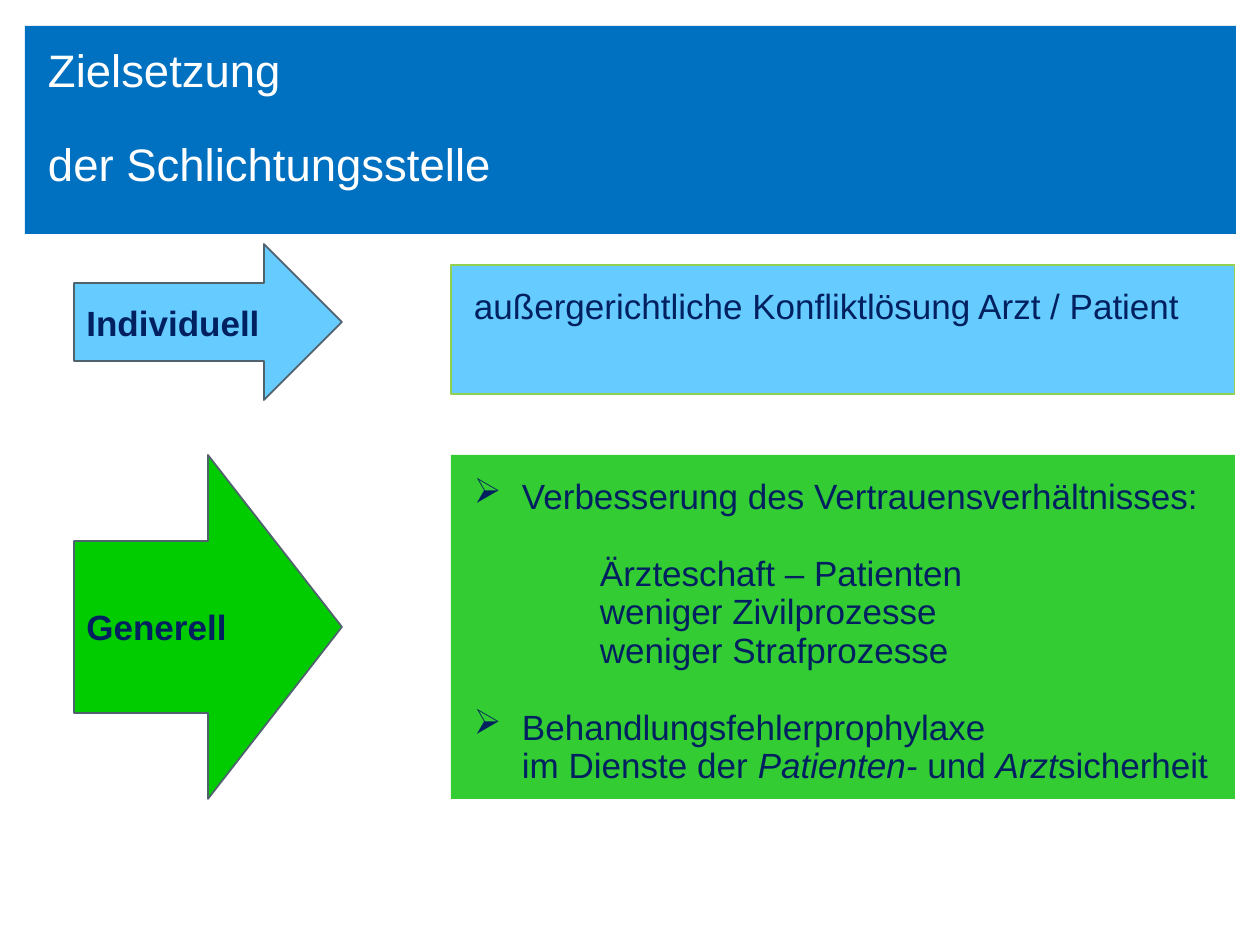
import pptx
import pptx.util
import pptx.dml.color
import pptx.enum.shapes
import pptx.enum.text
import lxml.etree

PX = 914400 // 126
FONT = "Arial"
NAVY, WHITE, SKY = "002060", "FFFFFF", "66CCFF"
INSET = 23
HANGING = 48
DEEP = 126
SHAPES = pptx.enum.shapes.MSO_SHAPE
ANCHORS = pptx.enum.text.MSO_ANCHOR


def px(length):
    return pptx.util.Emu(length * PX)


def rgb(value):
    return pptx.dml.color.RGBColor.from_string(value)


def add_block(slide, preset, box, fill, border=None, border_width=1):
    block = slide.shapes.add_shape(preset, *map(px, box))
    block.shadow.inherit = False
    block.fill.solid()
    block.fill.fore_color.rgb = rgb(fill)
    if border:
        block.line.color.rgb = rgb(border)
        block.line.width = pptx.util.Pt(border_width)
    else:
        block.line.fill.background()
    block.text_frame.word_wrap = True
    return block


def set_indent(paragraph, left, bullet=None):
    properties = paragraph._p.get_or_add_pPr()
    properties.set("marL", str(px(left)))
    properties.set("indent", str(-px(left) if bullet else 0))
    if bullet:
        mark = lxml.etree.SubElement(properties, pptx.oxml.ns.qn("a:buChar"))
        mark.set("char", bullet)


def add_runs(paragraph, runs, size, color, bold=False):
    paragraph.alignment = pptx.enum.text.PP_ALIGN.LEFT
    for text, italic in runs:
        run = paragraph.add_run()
        run.text = text
        run.font.name = FONT
        run.font.size = pptx.util.Pt(size)
        run.font.color.rgb = rgb(color)
        run.font.bold = bold
        run.font.italic = italic


def add_panel(slide, box, fill, lines, size, pitch, color, border=None):
    """Filled box; each line is (runs, indent, bullet, blank line before)."""
    panel = add_block(slide, SHAPES.RECTANGLE, box, fill, border, 0.75)
    frame = panel.text_frame
    frame.vertical_anchor = ANCHORS.TOP
    frame.margin_left = frame.margin_right = px(INSET)
    frame.margin_top = frame.margin_bottom = px(INSET)
    for number, (runs, indent, bullet, gap) in enumerate(lines):
        paragraph = frame.add_paragraph() if number else frame.paragraphs[0]
        paragraph.line_spacing = pptx.util.Pt(pitch)
        if gap:
            paragraph.space_before = pptx.util.Pt(pitch)
        set_indent(paragraph, indent, bullet)
        add_runs(paragraph, runs, size, color)


def add_arrow(slide, box, fill, label):
    arrow = add_block(slide, SHAPES.RIGHT_ARROW, box, fill, "51626F")
    arrow.text_frame.vertical_anchor = ANCHORS.MIDDLE
    add_runs(arrow.text_frame.paragraphs[0], [(label, False)], 20, NAVY, True)


def plain(text, indent=0, bullet=None, gap=False):
    return [(text, False)], indent, bullet, gap


def main():
    deck = pptx.Presentation()
    deck.slide_width, deck.slide_height = px(1260), px(945)
    slide = deck.slides.add_slide(deck.slide_layouts[6])

    # Title band
    title = [plain("Zielsetzung"), plain("der Schlichtungsstelle", gap=True)]
    add_panel(slide, (25, 26, 1211, 208), "0070C0", title, 26, 27, WHITE)

    # Individual goal
    individual = [plain("außergerichtliche Konfliktlösung Arzt / Patient")]
    add_panel(slide, (451, 265, 784, 129), SKY, individual, 20, 22, NAVY, "92D050")
    add_arrow(slide, (74, 244, 268, 156), SKY, "Individuell")

    # General goals
    service = [("im Dienste der ", False), ("Patienten-", True), (" und ", False),
               ("Arzt", True), ("sicherheit", False)]
    general = [
        plain("Verbesserung des Vertrauensverhältnisses:", HANGING, "➢"),
        plain("Ärzteschaft – Patienten", DEEP, gap=True),
        plain("weniger Zivilprozesse", DEEP),
        plain("weniger Strafprozesse", DEEP),
        plain("Behandlungsfehlerprophylaxe", HANGING, "➢", True),
        (service, HANGING, None, False),
    ]
    add_panel(slide, (451, 455, 784, 344), "33CC33", general, 20, 22, NAVY)
    add_arrow(slide, (74, 455, 268, 344), "00CC00", "Generell")

    deck.save("out.pptx")


if __name__ == "__main__":
    main()
